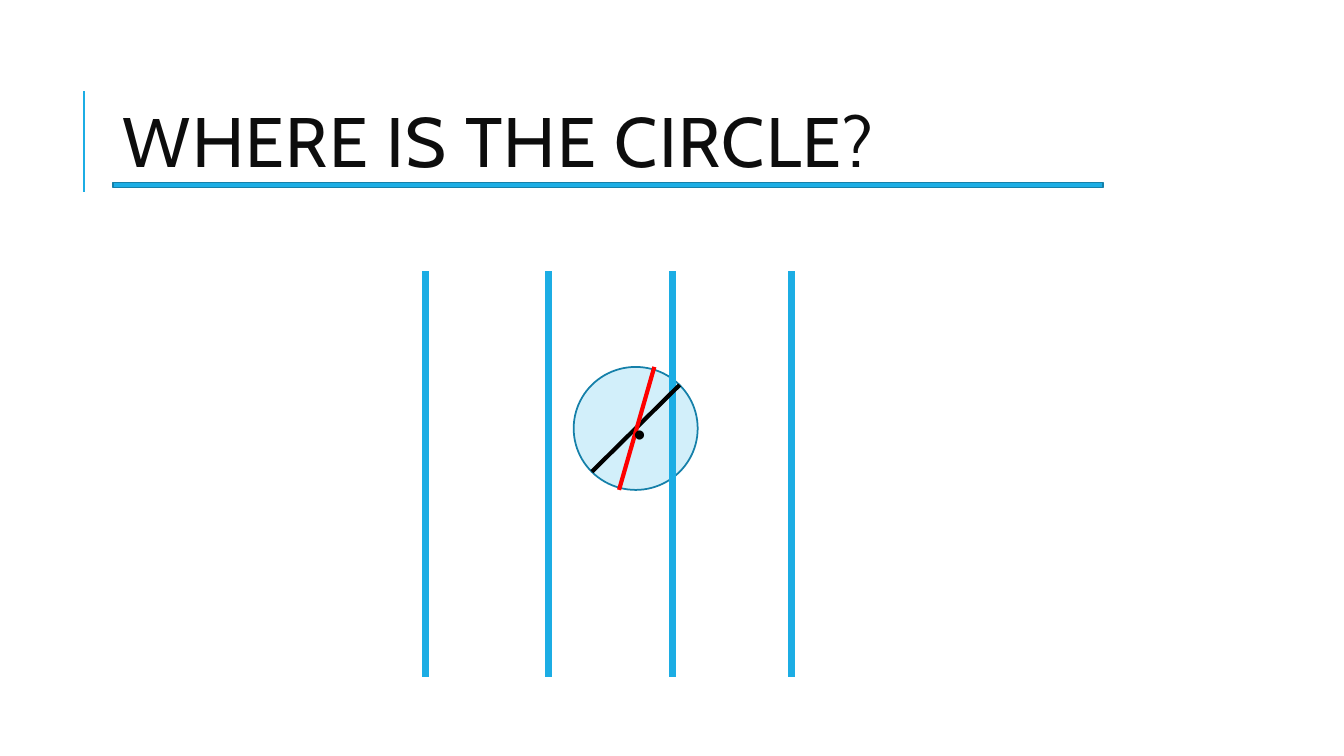
import pptx
import pptx.dml.color
import pptx.enum.shapes
import pptx.enum.text
import pptx.oxml
import pptx.oxml.ns
import pptx.util

Inches = pptx.util.Inches
Pt = pptx.util.Pt
Shapes = pptx.enum.shapes.MSO_SHAPE
Align = pptx.enum.text.PP_ALIGN
Anchor = pptx.enum.text.MSO_ANCHOR
AutoSize = pptx.enum.text.MSO_AUTO_SIZE


class SlideBuilder:
    colors = {
        "accent": "1CADE4",
        "outline": "1580A9",
        "disc": "D2EFFA",
        "title": "0D0D0D",
        "black": "000000",
        "red": "FF0000",
    }

    def __init__(self, slide):
        self.slide = slide

    def color(self, name):
        return pptx.dml.color.RGBColor.from_string(self.colors[name])

    def apply(self, target, values):
        for name, value in values.items():
            setattr(target, name, value)

    def line(self, start, end, color, width):
        connector = self.slide.shapes.add_connector(
            pptx.enum.shapes.MSO_CONNECTOR.STRAIGHT,
            *map(Inches, start + end))
        connector.line.color.rgb = self.color(color)
        connector.line.width = Pt(width)
        properties = connector._element.spPr
        properties.append(pptx.oxml.parse_xml(
            f"<a:effectLst {pptx.oxml.ns.nsdecls('a')}/>"))

    def shape(self, kind, box, fill):
        shape = self.slide.shapes.add_shape(kind, *map(Inches, box))
        shape.shadow.inherit = False
        shape.fill.solid()
        shape.fill.fore_color.rgb = self.color(fill)
        shape.line.color.rgb = self.color("outline")
        shape.line.width = Pt(1.25)

    def text(self, box, wording, color, font, frame, paragraph_format, spacing=0):
        shape = self.slide.shapes.add_textbox(*map(Inches, box))
        text_frame = shape.text_frame
        self.apply(text_frame, {"word_wrap": True, **frame})
        paragraph = text_frame.paragraphs[0]
        self.apply(paragraph, paragraph_format)
        run = paragraph.add_run()
        run.text = wording
        self.apply(run.font, font)
        run.font.color.rgb = self.color(color)
        if spacing:
            run.font._element.set("spc", str(spacing * 100))


def main():
    presentation = pptx.Presentation()
    presentation.slide_width = Inches(13.33)
    presentation.slide_height = Inches(7.5)
    slide = presentation.slides.add_slide(presentation.slide_layouts[6])
    builder = SlideBuilder(slide)

    builder.line((0.83, 1.9), (0.83, 0.9), "accent", 1.5)
    builder.shape(Shapes.OVAL, (5.69, 3.64, 1.23, 1.22), "disc")
    builder.text(
        (1.12, 0.64, 10.63, 1.64), "WHERE IS THE CIRCLE?", "title",
        {"name": "Cabin", "size": Pt(50)},
        {"vertical_anchor": Anchor.MIDDLE},
        {"line_spacing": 0.8}, spacing=1)
    builder.shape(Shapes.RECTANGLE, (1.12, 1.81, 9.82, 0.05), "accent")

    for bar_x in (4.22, 5.44, 6.67, 7.85):
        builder.line((bar_x, 2.69), (bar_x, 6.72), "accent", 4.5)

    builder.line((6.74, 3.82), (5.87, 4.68), "black", 3)
    builder.line((6.49, 3.64), (6.14, 4.86), "red", 3)
    builder.text(
        (6.15, 3.56, 0.31, 1.01), ".", "black",
        {"name": "Calibri", "size": Pt(54)},
        {"auto_size": AutoSize.SHAPE_TO_FIT_TEXT},
        {"alignment": Align.CENTER})

    presentation.save("out.pptx")


if __name__ == "__main__":
    main()
